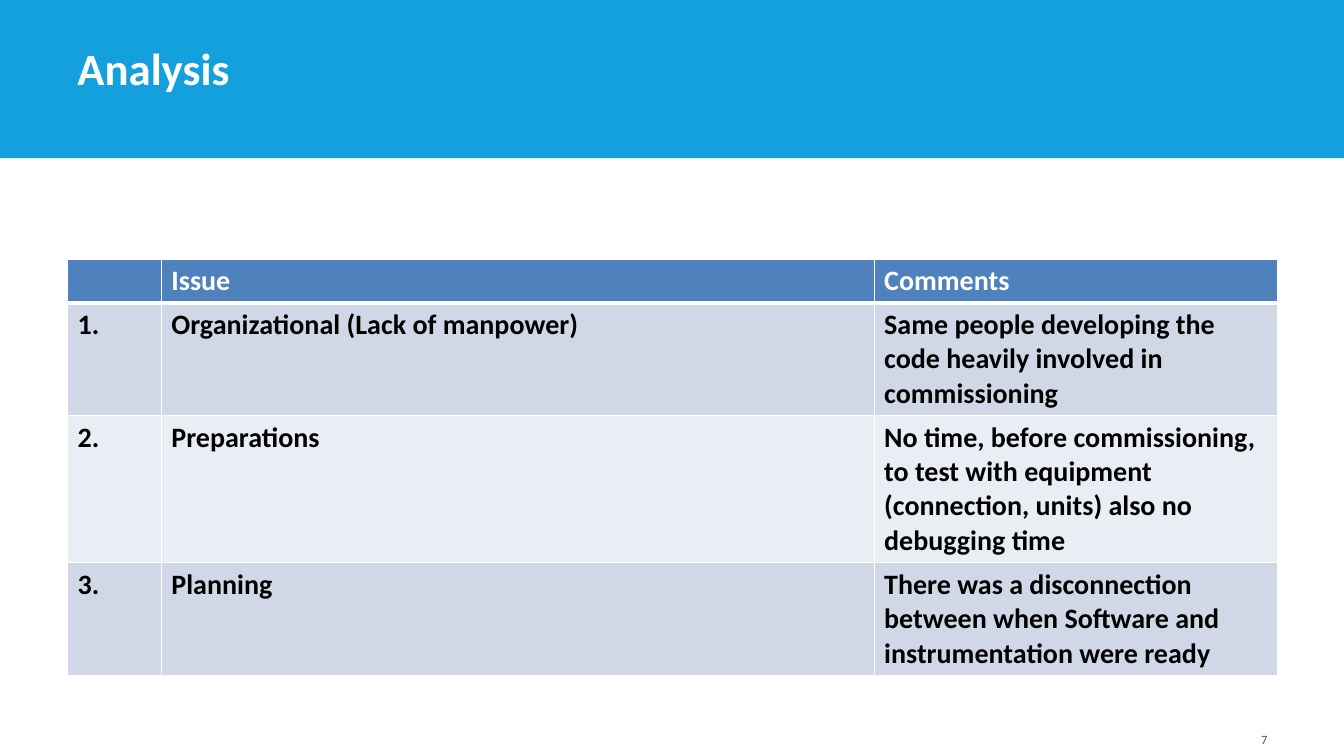
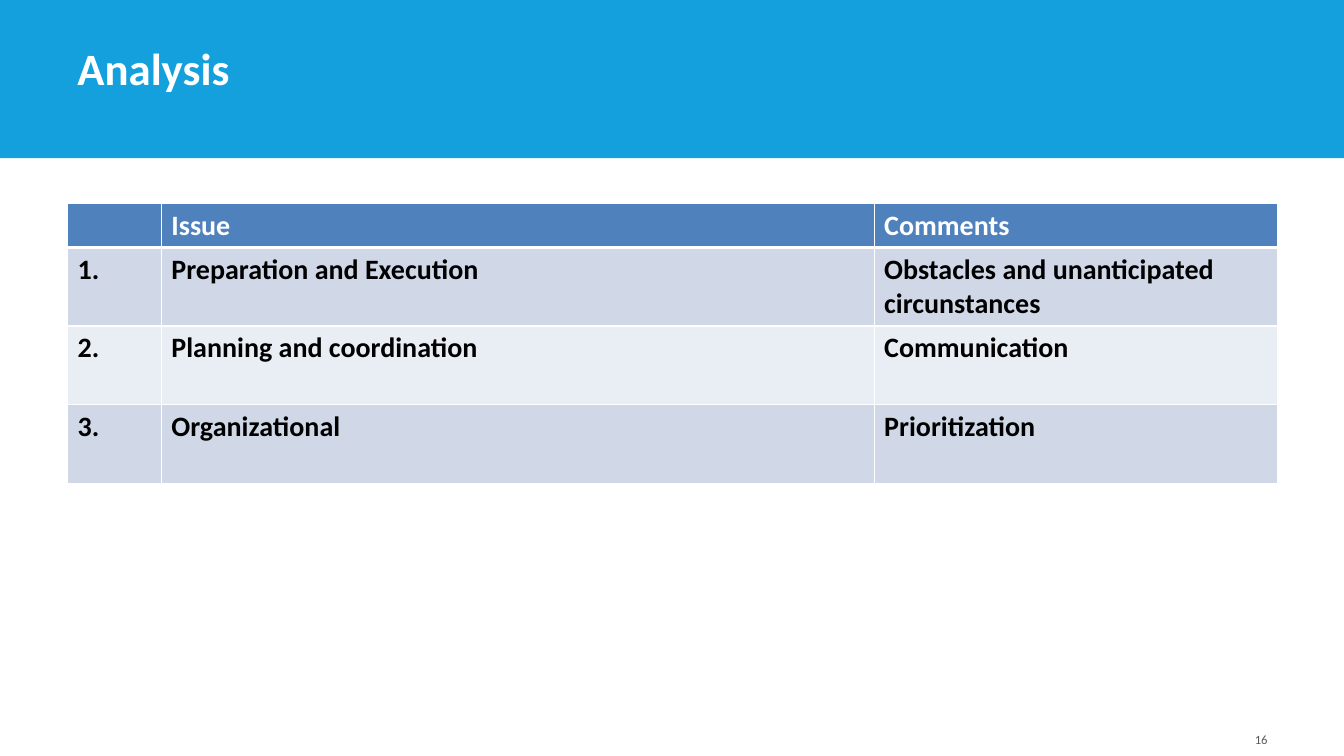
from dataclasses import dataclass

from lxml import etree
from pptx import Presentation
from pptx import util as u
from pptx.dml.color import RGBColor
from pptx.enum import shapes, text
from pptx.oxml import ns


@dataclass(frozen=True)
class Theme:
    font: str = "Calibri"
    band: str = "13A0DD"
    header: str = "4F81BD"
    stripes: tuple = ("D0D8E8", "E9EDF4")
    white: str = "FFFFFF"
    ink: str = "000000"
    muted: str = "595959"
    title_size: int = 32
    table_size: int = 20
    number_size: int = 9
    rule: int = 1
    header_rule: int = 3


THEME = Theme()
SLIDE_WIDTH, SLIDE_HEIGHT = 13.33, 7.5
MARGIN = 0.67
COLUMN_WIDTHS = (0.93, 7.07, 4)
HEADER_HEIGHT = 0.43
HEADINGS = ("", "Issue", "Comments")

# Page number, table top, and rows of (height, issue, comment)
ANALYSES = (
    (7, 2.57, (
        (1.12, "Organizational (Lack of manpower)",
         "Same people developing the code heavily involved in commissioning"),
        (1.46, "Preparations",
         "No time, before commissioning, to test with equipment "
         "(connection, units) also no debugging time"),
        (1.12, "Planning",
         "There was a disconnection between when Software and "
         "instrumentation were ready"),
    )),
    (16, 2.02, (
        (0.78, "Preparation and Execution",
         "Obstacles and unanticipated circunstances"),
        (0.78, "Planning and coordination", "Communication"),
        (0.78, "Organizational", "Prioritization"),
    )),
)


def write(frame, words, size, color, bold=False, align=text.PP_ALIGN.LEFT):
    para = frame.paragraphs[0]
    para.text = words
    para.alignment = align
    para.font.name = THEME.font
    para.font.size = u.Pt(size)
    para.font.bold = bold
    para.font.color.rgb = RGBColor.from_string(color)


def add_text(page, area, words, size, color, **style):
    box = page.shapes.add_textbox(*map(u.Inches, area))
    box.text_frame.word_wrap = True
    box.text_frame.vertical_anchor = text.MSO_ANCHOR.BOTTOM
    write(box.text_frame, words, size, color, **style)


def add_frame(page, title, number):
    """Band, title and page number shared by the slides."""
    band = page.shapes.add_shape(shapes.MSO_SHAPE.RECTANGLE, 0, 0,
                                 u.Inches(SLIDE_WIDTH), u.Inches(1.57))
    band.shadow.inherit = False
    band.fill.solid()
    band.fill.fore_color.rgb = RGBColor.from_string(THEME.band)
    band.line.fill.background()
    add_text(page, (MARGIN, 0.38, 10.41, 0.61), title,
             THEME.title_size, THEME.white, bold=True)
    add_text(page, (9.56, 7.06, 3.11, 0.4), str(number),
             THEME.number_size, THEME.muted, align=text.PP_ALIGN.RIGHT)


def set_borders(cell, top, bottom):
    properties = cell._tc.get_or_add_tcPr()
    widths = {"L": THEME.rule, "R": THEME.rule, "T": top, "B": bottom}
    for side, width in widths.items():
        line = etree.SubElement(properties, ns.qn(f"a:ln{side}"),
                                w=str(u.Pt(width)))
        fill = etree.SubElement(line, ns.qn("a:solidFill"))
        etree.SubElement(fill, ns.qn("a:srgbClr"), val=THEME.white)


def add_issue_table(page, top, issues):
    rows = [HEADINGS] + [(f"{index}.", issue, comment)
                         for index, (_, issue, comment) in enumerate(issues, 1)]
    heights = [HEADER_HEIGHT] + [height for height, _, _ in issues]
    area = (MARGIN, top, sum(COLUMN_WIDTHS), sum(heights))
    table = page.shapes.add_table(len(rows), len(COLUMN_WIDTHS),
                                  *map(u.Inches, area)).table
    for column, width in zip(table.columns, COLUMN_WIDTHS):
        column.width = u.Inches(width)
    for index, (row, height, words) in enumerate(zip(table.rows, heights, rows)):
        row.height = u.Inches(height)
        is_header = index == 0
        fill = THEME.header if is_header else THEME.stripes[(index - 1) % 2]
        color = THEME.white if is_header else THEME.ink
        # The thick rule lies between the header and the first issue
        above = THEME.header_rule if index == 1 else THEME.rule
        below = THEME.header_rule if is_header else THEME.rule
        for cell, label in zip(row.cells, words):
            set_borders(cell, above, below)
            cell.fill.solid()
            cell.fill.fore_color.rgb = RGBColor.from_string(fill)
            write(cell.text_frame, label, THEME.table_size, color, bold=True)


def main():
    deck = Presentation()
    deck.slide_width = u.Inches(SLIDE_WIDTH)
    deck.slide_height = u.Inches(SLIDE_HEIGHT)
    for number, top, issues in ANALYSES:
        page = deck.slides.add_slide(deck.slide_layouts[6])
        add_frame(page, "Analysis", number)
        add_issue_table(page, top, issues)
    deck.save("out.pptx")


if __name__ == "__main__":
    main()
